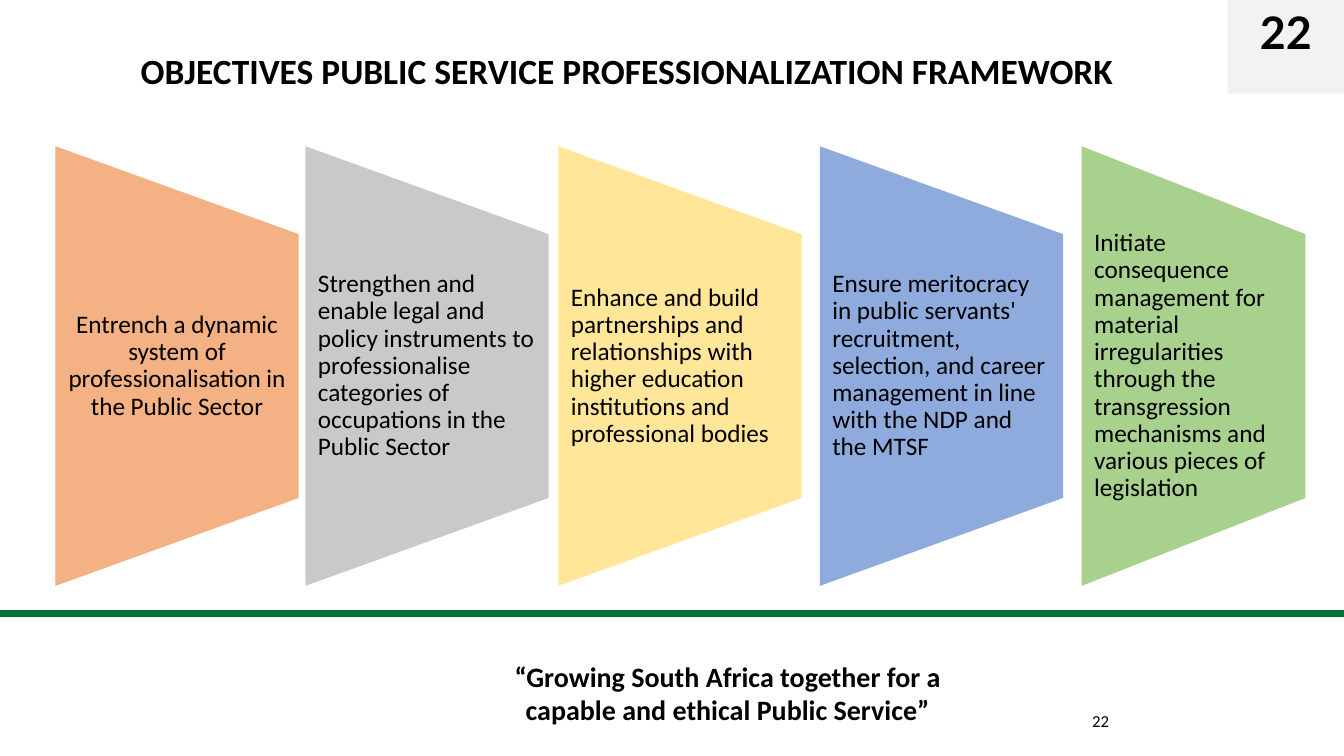
from pptx import Presentation
from pptx.dml.color import RGBColor
from pptx.enum.shapes import MSO_SHAPE
from pptx.enum.text import MSO_ANCHOR, PP_ALIGN
from pptx.util import Inches, Pt

deck = Presentation()
deck.slide_width, deck.slide_height = Inches(13.33), Inches(7.5)
slide = deck.slides.add_slide(deck.slide_layouts[6])
col, row = deck.slide_width / 100, deck.slide_height / 100


def paint(shape, fill, line=None):
    shape.shadow.inherit = False
    shape.fill.solid()
    shape.fill.fore_color.rgb = RGBColor.from_string(fill)
    if line:
        shape.line.color.rgb = RGBColor.from_string(line)
        shape.line.width = Pt(1)
    else:
        shape.line.fill.background()


def write(shape, text, size, font="Calibri", bold=False, align=PP_ALIGN.CENTER,
          anchor=MSO_ANCHOR.MIDDLE, spacing=None):
    frame = shape.text_frame
    frame.word_wrap = True
    frame.vertical_anchor = anchor
    frame.text = text
    for paragraph in frame.paragraphs:
        paragraph.alignment = align
        paragraph.line_spacing = spacing
        paragraph.font.size = Pt(size)
        paragraph.font.name = font
        paragraph.font.bold = bold
        paragraph.font.color.rgb = RGBColor.from_string("000000")


captions = [
    (36.45, 86.53, 35.4, 10.67, "“Growing South Africa together for a\ncapable and ethical Public Service”",
     {"size": 20, "bold": True, "anchor": MSO_ANCHOR.TOP}),
    (70.65, 92.67, 22.5, 5.33, "22", {"size": 12}),
    (5.78, 4.8, 81.75, 8.93, "OBJECTIVES PUBLIC SERVICE PROFESSIONALIZATION FRAMEWORK",
     {"size": 25.3, "bold": True}),
]
for left, top, width, height, text, style in captions:
    caption = slide.shapes.add_textbox(
        int(left * col), int(top * row), int(width * col), int(height * row))
    write(caption, text, **style)

divider = slide.shapes.add_shape(
    MSO_SHAPE.RECTANGLE, int(-1.58 * col), int(80.8 * row), int(104.2 * col), int(0.67 * row))
paint(divider, "007434", line="007434")

objectives = [
    (4.13, 18.1, "F4B183", PP_ALIGN.CENTER,
     "Entrench a dynamic system of professionalisation in the Public Sector"),
    (22.73, 18.1, "C9C9C9", PP_ALIGN.LEFT,
     "Strengthen and enable legal and policy instruments to professionalise "
     "categories of occupations in the Public Sector"),
    (41.55, 18.1, "FFE699", PP_ALIGN.LEFT,
     "Enhance and build partnerships and relationships with higher education "
     "institutions and professional bodies"),
    (61, 18.1, "8FAADC", PP_ALIGN.LEFT,
     "Ensure meritocracy in public servants' recruitment, selection, and career "
     "management in line with the NDP and the MTSF"),
    (80.48, 16.65, "A9D18E", PP_ALIGN.LEFT,
     "Initiate consequence management for material irregularities through the "
     "transgression mechanisms and various pieces of legislation"),
]
top, bottom = 19.35 * row, 77.5 * row
taper = (bottom - top) / 5
for left, width, color, align, text in objectives:
    near, far = left * col, (left + width) * col
    outline = slide.shapes.build_freeform(int(near), int(bottom))
    outline.add_line_segments([
        (int(near), int(top)), (int(far), int(top + taper)), (int(far), int(bottom - taper))])
    objective = outline.convert_to_shape()
    paint(objective, color)
    write(objective, text, size=18, align=align, spacing=0.9)
    frame = objective.text_frame
    frame.margin_left = frame.margin_right = int(0.93 * col)
    frame.margin_top = frame.margin_bottom = int(13.47 * row)

badge = slide.shapes.add_shape(
    MSO_SHAPE.RECTANGLE, int(91.35 * col), 0, int(8.65 * col), int(12.4 * row))
paint(badge, "F2F2F2")
write(badge, "22", size=32, font="Lato", bold=True, anchor=MSO_ANCHOR.TOP)

deck.save("out.pptx")
